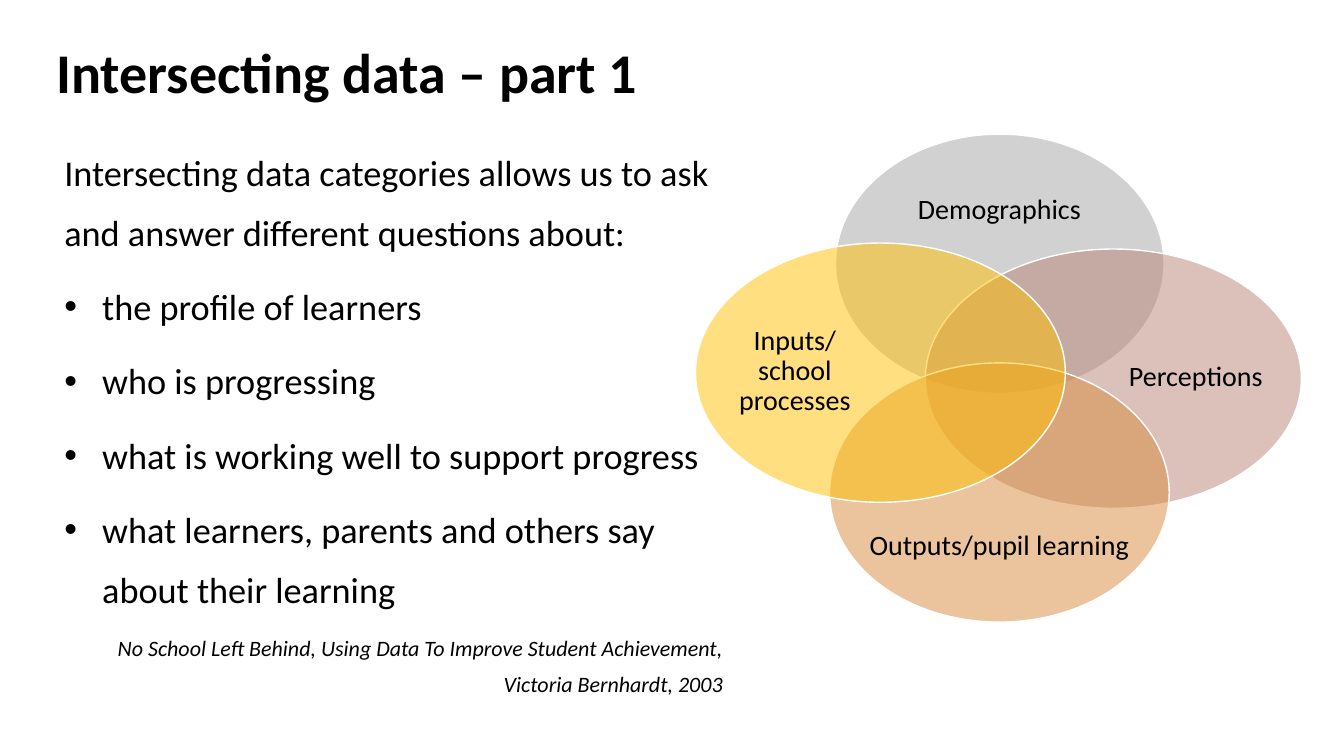
from dataclasses import dataclass

from pptx import Presentation
from pptx.dml.color import RGBColor
from pptx.enum import shapes, text
from pptx.oxml import ns, xmlchemy as xc
from pptx.util import Pt


@dataclass(frozen=True)
class Theme:
    font: str = "Calibri"
    ink: str = "000000"
    outline: str = "FFFFFF"
    grey: str = "A5A5A5"
    rose: str = "BB8376"
    orange: str = "D88B3D"
    gold: str = "FFC000"
    alpha: int = 50
    title: float = 40
    body: float = 25.9
    label: float = 20
    citation: float = 15.7


THEME = Theme()
CENTER, RIGHT = text.PP_ALIGN.CENTER, text.PP_ALIGN.RIGHT


def rgb(value):
    return RGBColor.from_string(value)


def add_child(parent, tag, **attrs):
    child = xc.OxmlElement(tag)
    for name, value in attrs.items():
        child.set(name, str(value))
    parent.append(child)


def style(p, size, spacing, align=None, bold=False, italic=False):
    p.line_spacing = spacing
    p.alignment = align
    for r in p.runs:
        r.font.name = THEME.font
        r.font.size = Pt(size)
        r.font.bold = bold
        r.font.italic = italic
        r.font.color.rgb = rgb(THEME.ink)


def add_text(s, box, anchor, inset=None):
    tf = s.shapes.add_textbox(*map(Pt, box)).text_frame
    tf.word_wrap = True
    tf.vertical_anchor = anchor
    if inset is not None:
        tf.margin_left = tf.margin_right = Pt(inset)
        tf.margin_top = tf.margin_bottom = Pt(inset)
    return tf


def add_title(s, box):
    tf = add_text(s, box, text.MSO_ANCHOR.MIDDLE)
    tf.text = "Intersecting data – part 1"
    style(tf.paragraphs[0], THEME.title, 0.9, bold=True)


def add_body(s, box):
    intro = "Intersecting data categories allows us to ask and answer different questions about:"
    topics = [
        "the profile of learners",
        "who is progressing",
        "what is working well to support progress",
        "what learners, parents and others say about their learning",
    ]
    citation = ("No School Left Behind, Using Data To Improve Student Achievement, "
                "Victoria Bernhardt, 2003")
    tf = add_text(s, box, text.MSO_ANCHOR.TOP)
    tf.text = "\n".join([intro, *topics, citation])
    for p in tf.paragraphs:
        style(p, THEME.body, 1.38)
        p.space_before = Pt(10)
    for p in tf.paragraphs[1:-1]:
        pPr = p._p.get_or_add_pPr()
        pPr.set("marL", str(Pt(27)))
        pPr.set("indent", str(Pt(-27)))
        add_child(pPr, "a:buFont", typeface="Arial")
        add_child(pPr, "a:buChar", char="•")
    style(tf.paragraphs[-1], THEME.citation, 1.38, RIGHT, italic=True)


def add_venn(s, box):
    left, top, width, height = box
    oval_height = 185.2
    sets = [
        ("Demographics", THEME.grey, (100, 0, 234.7), (126.7, 25.2, 180.7, 58.3), CENTER),
        ("Perceptions", THEME.rose, (width - 268.6, 82.1, 268.6),
         (309.6, 103, 103.7, 141.8), None),
        ("Outputs/pupil learning", THEME.orange, (95.8, height - oval_height, 242.6),
         (123.8, 265, 186.5, 58.3), CENTER),
        ("Inputs/ school processes", THEME.gold, (0, 77.8, 264.2),
         (20.2, 98.6, 101.5, 141.8), CENTER),
    ]
    for name, color, (x, y, w), (label_x, label_y, label_w, label_h), align in sets:
        sp = s.shapes.add_shape(shapes.MSO_SHAPE.OVAL, Pt(left + x), Pt(top + y),
                                Pt(w), Pt(oval_height))
        sp.shadow.inherit = False
        sp.fill.solid()
        sp.fill.fore_color.rgb = rgb(color)
        add_child(sp._element.spPr.find(ns.qn("a:solidFill"))[0], "a:alpha",
                  val=THEME.alpha * 1000)
        sp.line.color.rgb = rgb(THEME.outline)
        sp.line.width = Pt(1)
        tf = add_text(s, (left + label_x, top + label_y, label_w, label_h),
                      text.MSO_ANCHOR.MIDDLE, inset=0)
        tf.text = name
        style(tf.paragraphs[0], THEME.label, 0.9, align)


def main():
    prs = Presentation()
    prs.slide_width, prs.slide_height = Pt(960), Pt(540)
    s = prs.slides.add_slide(prs.slide_layouts[6])
    add_title(s, (33.1, 25.9, 853.2, 56.2))
    add_body(s, (38.9, 92.2, 484.6, 432.7))
    add_venn(s, (496.8, 95.8, 432.8, 348.6))
    prs.save("out.pptx")


if __name__ == "__main__":
    main()
